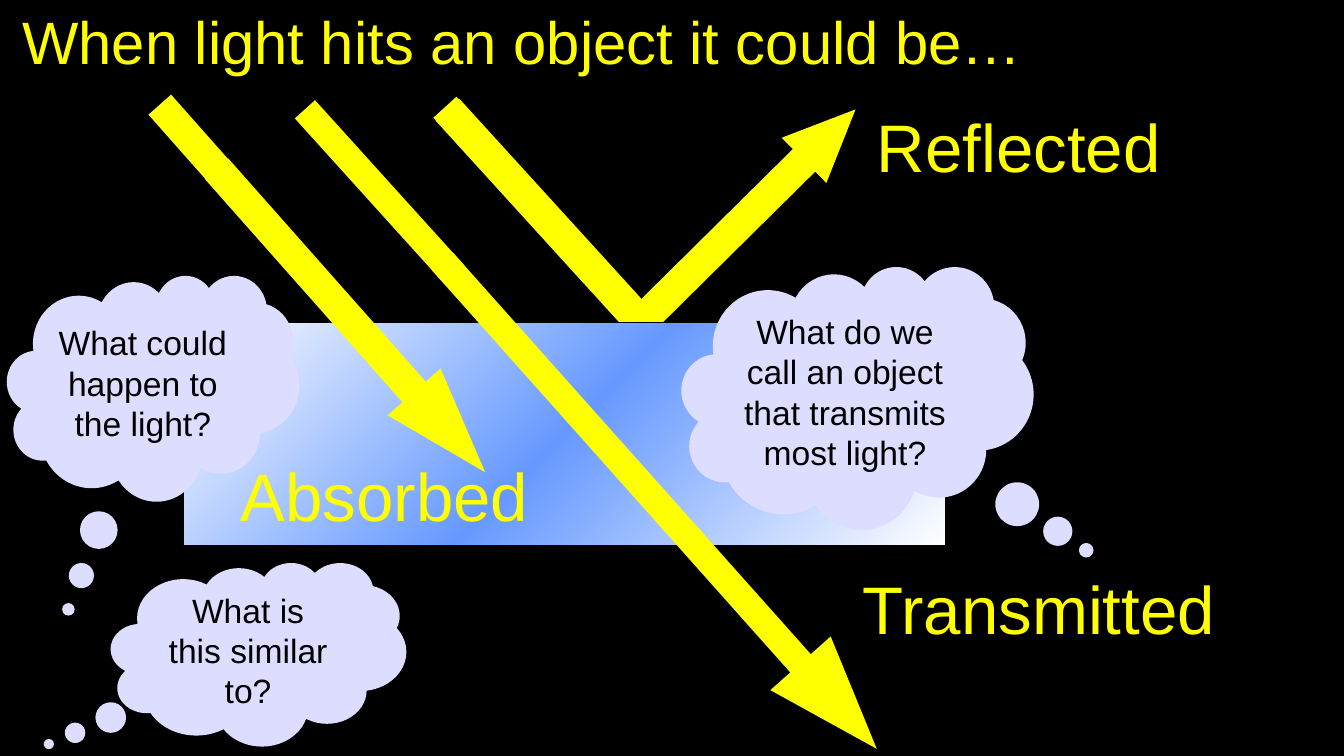
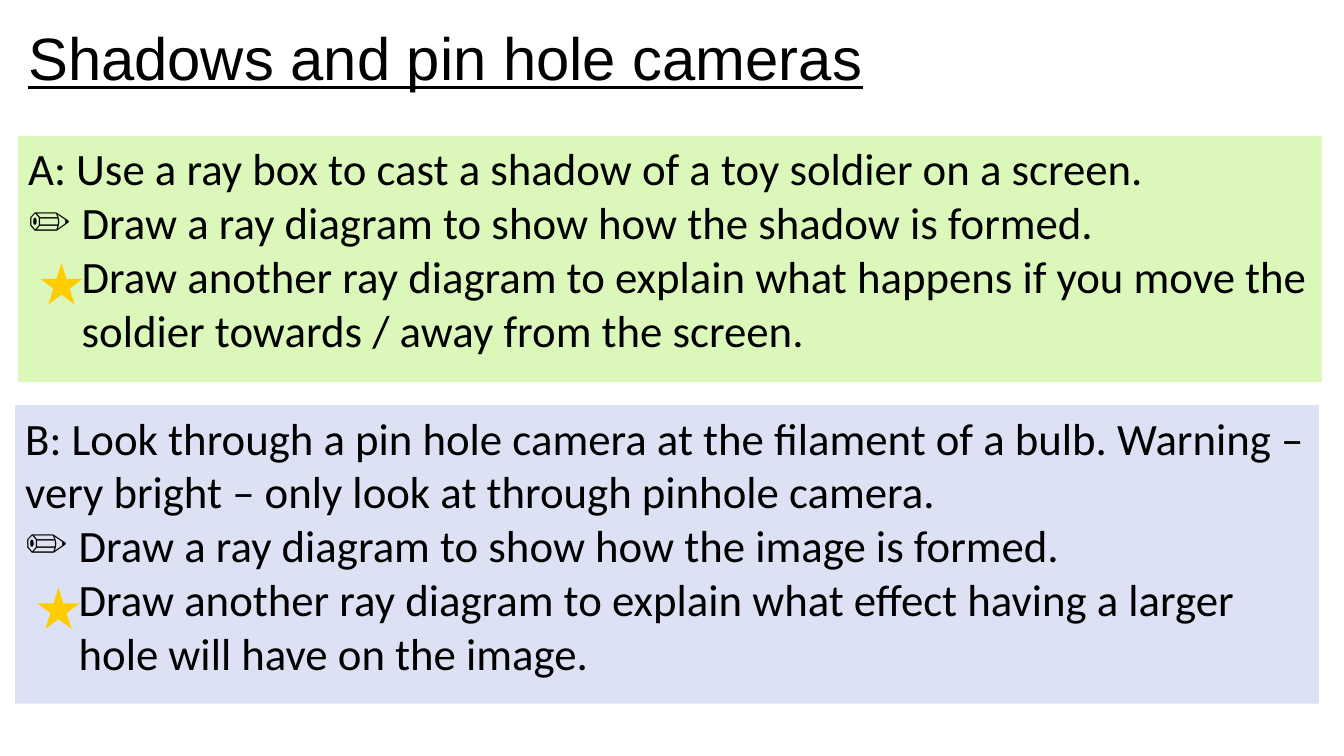
from copy import deepcopy

from lxml.etree import SubElement
from pptx import Presentation
from pptx.dml.color import RGBColor
from pptx.enum.shapes import MSO_SHAPE as Preset
from pptx.enum.text import MSO_ANCHOR as Anchor, MSO_AUTO_SIZE as AutoSize, PP_ALIGN as Align
from pptx.oxml.ns import qn
from pptx.util import Inches, Pt

COLOURS = {
    "black": "000000",
    "white": "FFFFFF",
    "light": "FFFF00",
    "glass": "6699FF",
    "thought": "DDDDFF",
    "green": "DCF7BA",
    "lilac": "DCE1F4",
    "star": "FFCC00",
}
HEADING_FONT = "Arial"
TASK_FONT = "Calibri"
TITLE_ONLY, TWO_CONTENT = 5, 3
HANG = 0.53


def rgb(name):
    return RGBColor.from_string(COLOURS[name])


def fill_with(target, colour):
    target.fill.solid()
    target.fill.fore_color.rgb = rgb(colour)


def add_run(paragraph, words, size, colour, font=HEADING_FONT):
    run = paragraph.add_run()
    run.text = words
    run.font.name = font
    run.font.size = Pt(size)
    run.font.color.rgb = rgb(colour)
    return run


def add_preset(slide, preset, box, colour, adjustments=(), rotation=0):
    shape = slide.shapes.add_shape(preset, *map(Inches, box))
    shape.shadow.inherit = False
    shape.rotation = rotation
    for index, value in enumerate(adjustments):
        shape.adjustments[index] = value
    fill_with(shape, colour)
    shape.line.fill.background()
    return shape


def place(placeholder, box):
    placeholder.left, placeholder.top, placeholder.width, placeholder.height = map(Inches, box)
    frame = placeholder.text_frame
    frame.word_wrap = True
    frame.auto_size = AutoSize.NONE
    frame.vertical_anchor = Anchor.TOP
    return frame


def add_titled_slide(deck, layout, background, title, box, colour, underline=False):
    slide = deck.slides.add_slide(deck.slide_layouts[layout])
    fill_with(slide.background, background)
    heading = place(slide.shapes.title, box).paragraphs[0]
    heading.alignment = Align.LEFT
    run = add_run(heading, title, 42.7, colour)
    if underline:
        run.font.underline = True
    return slide


def add_slab(slide, box):
    slab = add_preset(slide, Preset.RECTANGLE, box, "white")
    slab.fill.gradient()
    slab.fill.gradient_angle = 315
    stops = slab._element.spPr.find(".//" + qn("a:gsLst"))
    stops.insert(1, deepcopy(stops[0]))
    colours = ("white", "glass", "white")
    for stop, position, colour in zip(slab.fill.gradient_stops, (0, 0.5, 1), colours):
        stop.position = position
        stop.color.rgb = rgb(colour)
    slab.line.color.rgb = rgb("black")
    slab.line.width = Pt(0.75)


def add_outcome(slide, words, box):
    frame = slide.shapes.add_textbox(*map(Inches, box)).text_frame
    frame.word_wrap = True
    frame.paragraphs[0].alignment = Align.CENTER
    add_run(frame.paragraphs[0], words, 48, "light")


def add_ray_diagram(slide, left, top, width, height):
    def within(x, y, w, h):
        return left + x, top + y, w, h

    def beam(x, y, length, thickness, rotation):
        add_preset(slide, Preset.RECTANGLE, within(x, y, length, thickness), "light",
                   rotation=rotation)

    def arrow(x, y, length, thickness, rotation, *head):
        add_preset(slide, Preset.RIGHT_ARROW, within(x, y, length, thickness), "light",
                   head, rotation)

    arrow(4.21, -1.42, 2.87, 0.63, 315.3, 0.5, 1.14)
    beam(2.13, -1.16, 3, 0.32, 47.7)
    add_slab(slide, (left, top, width, height))
    for words, x, y, w in (
        ("Transmitted", 6.22, 2.38, 4.53),
        ("Reflected", 6.49, -2.2, 3.59),
        ("Absorbed", -0.05, 1.26, 4.09),
    ):
        add_outcome(slide, words, within(x, y, w, 0.75))
    arrow(-0.35, -0.37, 4.02, 0.7, 48.5, 0.44, 1.52)
    beam(2.23, -1.47, 2.22, 0.31, 47.7)
    beam(0.84, -1.43, 2.21, 0.27, 47.9)
    beam(-0.61, -1.48, 2.22, 0.3, 48.5)
    arrow(1.48, 1.41, 6.48, 0.8, 48.3, 0.34, 1.42)


def add_thought(slide, question, box, tail):
    cloud = add_preset(slide, Preset.CLOUD_CALLOUT, box, "thought", tail)
    frame = cloud.text_frame
    frame.word_wrap = True
    frame.vertical_anchor = Anchor.MIDDLE
    frame.paragraphs[0].alignment = Align.CENTER
    add_run(frame.paragraphs[0], question, 24, "black")


def add_task_line(paragraph, words, margin=0, indent=0, bullet=None):
    paragraph.space_before = paragraph.space_after = Pt(0)
    paragraph.line_spacing = 1.0
    props = paragraph._p.get_or_add_pPr()
    props.set("marL", str(Inches(margin)))
    props.set("indent", str(Inches(indent)))
    if bullet:
        SubElement(props, qn("a:buFont")).set("typeface", TASK_FONT)
        SubElement(props, qn("a:buChar")).set("char", bullet)
    else:
        SubElement(props, qn("a:buNone"))
    add_run(paragraph, words, 32, "black", TASK_FONT)


def fill_task_panel(slide, index, box, colour, task, drawing, challenge, star_line):
    left, top = box[:2]
    panel = slide.placeholders[index]
    frame = place(panel, box)
    fill_with(panel, colour)
    add_task_line(frame.paragraphs[0], task)
    add_task_line(frame.add_paragraph(), drawing, HANG, -HANG, "✏")
    add_task_line(frame.add_paragraph(), challenge, HANG)
    star_box = left + 0.22, top + 0.16 + 0.55 * star_line, 0.42, 0.41
    add_preset(slide, Preset.STAR_5_POINT, star_box, "star")


def build_light_slide(deck):
    slide = add_titled_slide(deck, TITLE_ONLY, "black", "When light hits an object it could be…",
                             (0.12, 0, 11.09, 0.82), "light")
    add_ray_diagram(slide, 1.82, 3.2, 7.56, 2.21)
    for question, box, tail in (
        ("What could happen to the light?", (0.07, 2.73, 2.9, 2.24), (-0.29, 0.98)),
        ("What is this similar to?", (1.1, 5.58, 2.93, 1.82), (-0.71, 0.49)),
        ("What do we call an object that transmits most light?",
         (6.76, 2.64, 3.49, 2.61), (0.65, 0.58)),
    ):
        add_thought(slide, question, box, tail)


def build_shadow_slide(deck):
    slide = add_titled_slide(deck, TWO_CONTENT, "white", "Shadows and pin hole cameras",
                             (0.18, 0.16, 9.86, 0.82), "black", underline=True)
    fill_task_panel(
        slide, 1, (0.18, 1.35, 12.93, 2.44), "green",
        "A: Use a ray box to cast a shadow of a toy soldier on a screen.",
        "Draw a ray diagram to show how the shadow is formed.",
        "Draw another ray diagram to explain what happens if you move the soldier "
        "towards / away from the screen.",
        star_line=2,
    )
    fill_task_panel(
        slide, 2, (0.15, 4.02, 12.93, 2.96), "lilac",
        "B: Look through a pin hole camera at the filament of a bulb. Warning – very bright "
        "– only look at through pinhole camera.",
        "Draw a ray diagram to show how the image is formed.",
        "Draw another ray diagram to explain what effect having a larger hole will have "
        "on the image.",
        star_line=3,
    )


def main():
    deck = Presentation()
    deck.slide_width, deck.slide_height = Inches(13.33), Inches(7.5)
    build_light_slide(deck)
    build_shadow_slide(deck)
    deck.save("out.pptx")


if __name__ == "__main__":
    main()
